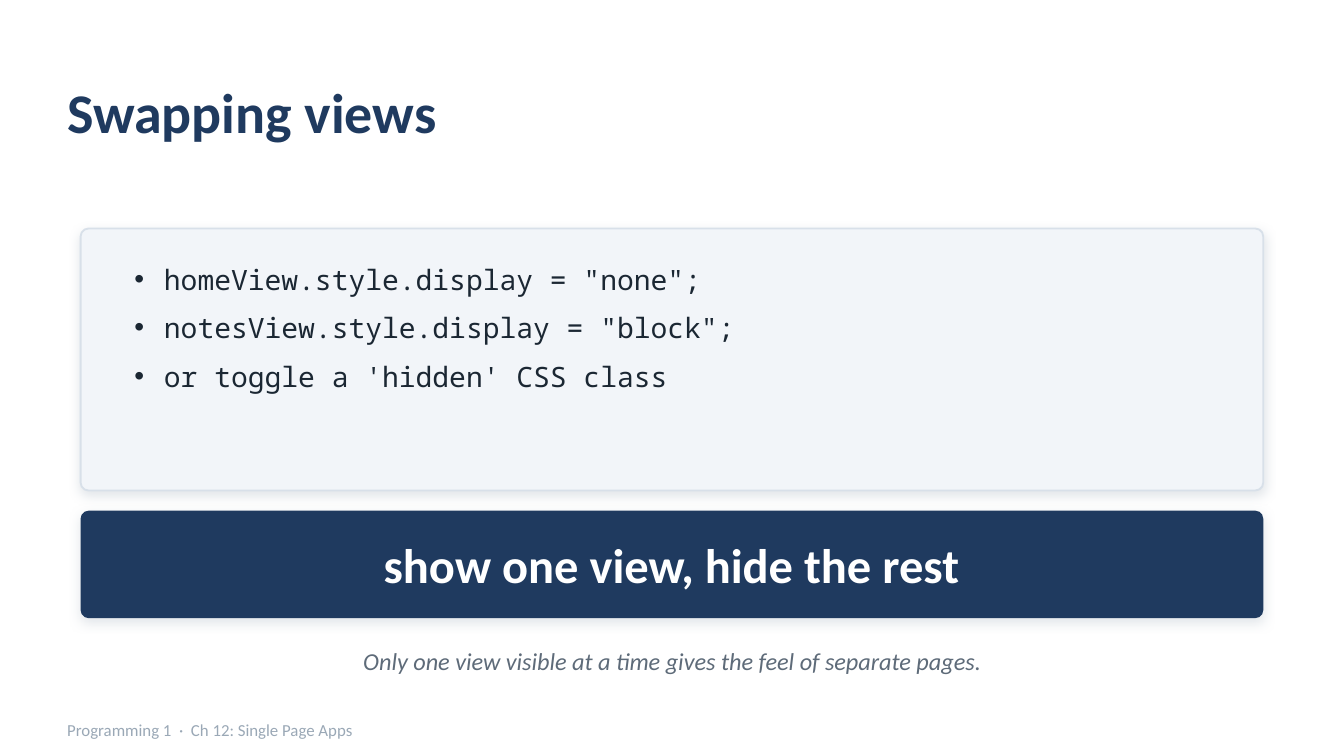
from lxml import etree
from pptx import Presentation
from pptx.dml.color import RGBColor
from pptx.enum.shapes import MSO_SHAPE
from pptx.enum.text import MSO_ANCHOR, MSO_AUTO_SIZE, PP_ALIGN
from pptx.oxml.ns import qn
from pptx.util import Inches, Pt

ROUNDED = MSO_SHAPE.ROUNDED_RECTANGLE
TOP, MIDDLE = MSO_ANCHOR.TOP, MSO_ANCHOR.MIDDLE
LEFT, CENTER = PP_ALIGN.LEFT, PP_ALIGN.CENTER
NO_AUTOFIT = MSO_AUTO_SIZE.NONE

SANS, MONO = "Calibri", "Noto Sans Mono"
NAVY, INK, GREY, MUTED = "1F3A5F", "1B2733", "5E6B79", "9AA8B6"
WHITE, PANEL, PANEL_EDGE = "FFFFFF", "F2F5F9", "D8E0E9"
CARD_LEFT, CARD_WIDTH, CORNER = 0.6, 8.8, 0.06
CODE_LINES = [
    'homeView.style.display = "none";',
    'notesView.style.display = "block";',
    "or toggle a 'hidden' CSS class",
]


def color(hex_value):
    """Turn a hex string into a colour."""
    return RGBColor.from_string(hex_value)


def place(shape, left, top, width, height):
    """Move and size a shape, in inches."""
    shape.left, shape.top = Inches(left), Inches(top)
    shape.width, shape.height = Inches(width), Inches(height)


def prepare_frame(frame, anchor, inset=None):
    """Set wrapping, anchor and, if given, equal insets."""
    frame.word_wrap = True
    frame.auto_size = NO_AUTOFIT
    frame.vertical_anchor = anchor
    if inset is not None:
        frame.margin_left = frame.margin_right = Inches(inset)
        frame.margin_top = frame.margin_bottom = Inches(inset)


def add_run(paragraph, text, size, hex_value, face=SANS, bold=False, italic=False):
    """Append one formatted run."""
    run = paragraph.add_run()
    run.text = text
    font = run.font
    font.name, font.size = face, Pt(size)
    font.bold, font.italic = bold, italic
    font.color.rgb = color(hex_value)


def write_line(shape, text, size, hex_value, align=LEFT, **style):
    """Fill a shape with one vertically centred line."""
    prepare_frame(shape.text_frame, MIDDLE, 0)
    paragraph = shape.text_frame.paragraphs[0]
    paragraph.alignment = align
    add_run(paragraph, text, size, hex_value, **style)


def add_label(slide, box, *line, **style):
    """Add a text box holding one line."""
    label = slide.shapes.add_textbox(*map(Inches, box))
    write_line(label, *line, **style)


def add_shadow(shape):
    """Give a shape a soft shadow straight below it."""
    shape.shadow.inherit = False
    effects = shape.element.spPr.find(qn("a:effectLst"))
    shadow = etree.SubElement(
        effects, qn("a:outerShdw"), blurRad=str(Pt(6)), dist=str(Pt(2)),
        dir="5400000", algn="ctr", rotWithShape="0")
    tint = etree.SubElement(shadow, qn("a:srgbClr"), val=MUTED)
    etree.SubElement(tint, qn("a:alpha"), val="28000")


def add_card(slide, top, height, fill, edge=None):
    """Add a full-width rounded card with a shadow."""
    card = slide.shapes.add_shape(
        ROUNDED, *map(Inches, (CARD_LEFT, top, CARD_WIDTH, height)))
    card.adjustments[0] = CORNER / height
    card.fill.solid()
    card.fill.fore_color.rgb = color(fill)
    if edge:
        card.line.color.rgb = color(edge)
        card.line.width = Pt(1)
    else:
        card.line.fill.background()
    add_shadow(card)
    return card


def write_bullets(body, lines):
    """Fill the body placeholder with bulleted code lines."""
    frame = body.text_frame
    prepare_frame(frame, TOP)
    for index, line in enumerate(lines):
        paragraph = frame.add_paragraph() if index else frame.paragraphs[0]
        properties = paragraph._p.get_or_add_pPr()
        properties.set("marL", str(Inches(0.22)))
        properties.set("indent", str(Inches(-0.22)))
        etree.SubElement(properties, qn("a:buChar"), char="•")
        paragraph.alignment = LEFT
        paragraph.space_before, paragraph.space_after = Pt(0), Pt(8)
        add_run(paragraph, line, 15, INK, face=MONO)


def main():
    """Build the slide and save it."""
    deck = Presentation()
    deck.slide_width = Inches(10)
    deck.slide_height = deck.slide_width * 9 // 16
    slide = deck.slides.add_slide(deck.slide_layouts[1])
    slide.background.fill.solid()
    slide.background.fill.fore_color.rgb = color(WHITE)
    title, body = slide.placeholders

    place(title, 0.5, 0.4, 9, 0.85)
    write_line(title, "Swapping views", 30, NAVY, bold=True)

    code_card = add_card(slide, 1.7, 1.95, PANEL, PANEL_EDGE)
    body.element.addprevious(code_card.element)
    place(body, 0.9, 1.9, 8.2, 1.6)
    write_bullets(body, CODE_LINES)

    add_card(slide, 3.8, 0.8, NAVY)
    add_label(slide, (CARD_LEFT, 3.83, CARD_WIDTH, 0.74),
              "show one view, hide the rest", 26, WHITE, CENTER, bold=True)
    add_label(slide, (CARD_LEFT, 4.72, CARD_WIDTH, 0.4),
              "Only one view visible at a time gives the feel of separate pages.",
              13, GREY, CENTER, italic=True)
    add_label(slide, (0.5, 5.3, 8, 0.26),
              "Programming 1  ·  Ch 12: Single Page Apps", 9, MUTED)
    deck.save("out.pptx")


if __name__ == "__main__":
    main()
